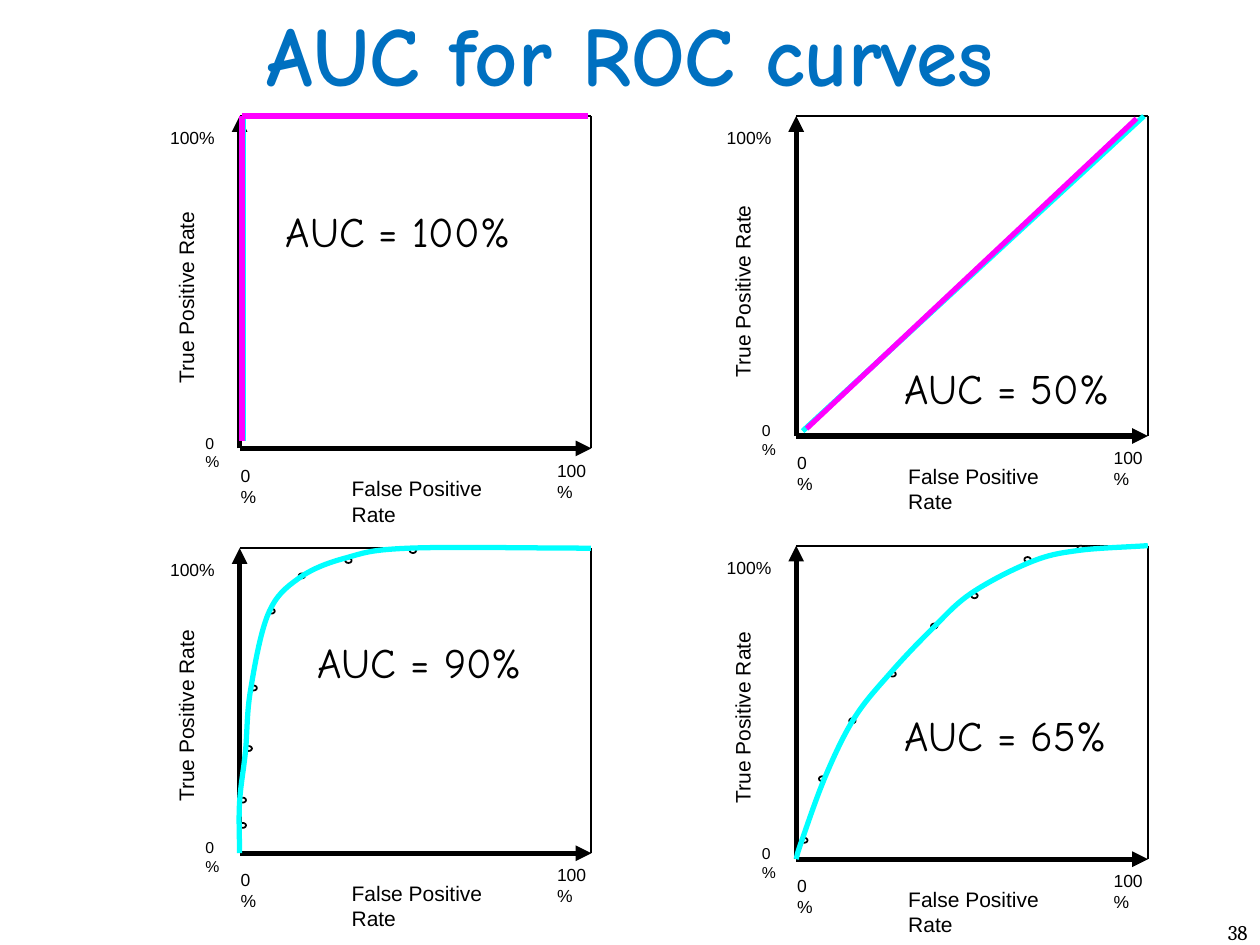
from lxml import etree
from pptx import Presentation
from pptx.dml.color import RGBColor
from pptx.enum.shapes import MSO_CONNECTOR, MSO_SHAPE
from pptx.enum.text import MSO_ANCHOR, PP_ALIGN
from pptx.oxml.ns import qn
from pptx.util import Cm, Pt

LINE = MSO_CONNECTOR.STRAIGHT
OVAL = MSO_SHAPE.OVAL
MID = MSO_ANCHOR.MIDDLE
LEFT, CENTER, RIGHT = PP_ALIGN.LEFT, PP_ALIGN.CENTER, PP_ALIGN.RIGHT
BLACK = RGBColor(0, 0, 0)
WHITE = RGBColor(255, 255, 255)
BLUE = RGBColor(0, 0x70, 0xC0)
CYAN = RGBColor(0, 255, 255)
PINK = RGBColor(255, 0, 255)

WIDE = 7.09
DOT_W, DOT_H = 0.13, 0.1
PLOTS = [
    {"left": 4.83, "top": 2.34, "base": 9.04,
     "auc": ("AUC = 100%", 5.51, 4.01, 5.92),
     "lines": [(CYAN, [(11.84, 2.34), (4.9, 2.34), (4.9, 8.89)]),
               (PINK, [(11.86, 2.34), (4.88, 2.34), (4.88, 8.89)])]},
    {"left": 16.05, "top": 2.34, "base": 8.79,
     "auc": ("AUC = 50%", 17.98, 7.19, 5.28),
     "lines": [(CYAN, [(23.06, 2.34), (16.18, 8.69)]),
               (PINK, [(22.91, 2.39), (16.26, 8.64)])]},
    {"left": 4.83, "top": 11.05, "base": 17.2,
     "auc": ("AUC = 90%", 6.15, 12.7, 5.28),
     "dots": [(8.26, 11.05), (6.96, 11.25), (6.02, 11.56), (5.41, 12.27),
              (5.05, 13.82), (4.95, 15.04), (4.83, 16.08), (4.83, 16.59)],
     "curve": [(11.91, 11.05), (8.26, 11.05), (6.96, 11.25), (6.02, 11.66),
               (5.41, 12.37), (5.05, 13.92), (4.95, 15.14), (4.83, 16.18),
               (4.83, 17.2)]},
    {"left": 16.05, "top": 11, "base": 17.32,
     "auc": ("AUC = 65%", 17.98, 14.17, 5.28),
     "dots": [(21.72, 11), (20.65, 11.23), (19.58, 11.96), (18.77, 12.57),
              (17.93, 13.54), (17.12, 14.48), (16.51, 15.65), (16.15, 16.89)],
     "curve": [(23.14, 11), (21.72, 11.1), (20.78, 11.33), (19.58, 11.96),
               (18.77, 12.7), (17.93, 13.59), (17.22, 14.48), (16.64, 15.65),
               (16.15, 16.99), (16.05, 17.32)]},
]
LABELS = [
    ("100%", "top", -1.65, 0.1, 1.54, 0.69, 10),
    ("0%", "base", -0.94, -0.43, 0.83, 1.02, 9),
    ("0%", "base", -0.23, 0.2, 0.83, 1.09, 10),
    ("100%", "base", 6.15, 0.1, 1.3, 1.09, 10),
    ("False Positive Rate", "base", 2.01, 0.43, 3.78, 1.27, 12),
]

deck = Presentation()
deck.slide_width, deck.slide_height = Cm(25.4), Cm(19.05)
slide = deck.slides.add_slide(deck.slide_layouts[5])
shapes = slide.shapes


def put_text(text, x, y, w, h, size=12, font="Arial", color=BLACK, bold=False,
             align=LEFT, turn=0, box=None):
    box = box or shapes.add_textbox(0, 0, 0, 0)
    box.left, box.top, box.width, box.height = Cm(x), Cm(y), Cm(w), Cm(h)
    box.rotation = turn
    box.text_frame.word_wrap = True
    para = box.text_frame.paragraphs[0]
    para.alignment = align
    run = para.add_run()
    run.text = text
    run.font.size, run.font.name, run.font.bold = Pt(size), font, bold
    run.font.color.rgb = color
    return box


def draw_line(start, end, color=BLACK, width=1, arrow=False):
    line = shapes.add_connector(LINE, *[Cm(v) for v in (*start, *end)])
    line.line.color.rgb = color
    line.line.width = Pt(width)
    props = line._element.spPr
    if arrow:
        etree.SubElement(props.find(qn("a:ln")), qn("a:tailEnd"), type="triangle")
    etree.SubElement(props, qn("a:effectLst"))


def draw_dot(x, y):
    dot = shapes.add_shape(OVAL, Cm(x), Cm(y), Cm(DOT_W), Cm(DOT_H))
    dot.shadow.inherit = False
    dot.fill.solid()
    dot.fill.fore_color.rgb = WHITE
    dot.line.color.rgb = BLACK
    dot.line.width = Pt(1)


def ease(knots, i):
    (ax, ay), (bx, by) = knots[max(i - 1, 0)], knots[min(i + 1, len(knots) - 1)]
    part = 6 if 0 < i < len(knots) - 1 else 3
    return (bx - ax) / part, (by - ay) / part


def draw_curve(knots):
    points = []
    for i in range(len(knots) - 1):
        (ax, ay), (bx, by) = knots[i], knots[i + 1]
        (ux, uy), (vx, vy) = ease(knots, i), ease(knots, i + 1)
        points += [(ax + ux, ay + uy), (bx - vx, by - vy), (bx, by)]
    pen = shapes.build_freeform(Cm(knots[0][0]), Cm(knots[0][1]))
    pen.add_line_segments([(Cm(x), Cm(y)) for x, y in points], close=False)
    curve = pen.convert_to_shape()
    steps = list(curve._element.iter(qn("a:lnTo")))
    for i in range(0, len(steps), 3):
        steps[i].tag = qn("a:cubicBezTo")
        for step in steps[i + 1:i + 3]:
            steps[i].append(step[0])
            step.getparent().remove(step)
    curve.shadow.inherit = False
    curve.fill.background()
    curve.line.color.rgb = CYAN
    curve.line.width = Pt(3)


def draw_plot(plot):
    left, top, base = plot["left"], plot["top"], plot["base"]
    right = left + WIDE
    draw_line((left, top), (right, top))
    draw_line((right, top), (right, base))
    draw_line((left, base), (left, top), width=3, arrow=True)
    draw_line((left, base), (right, base), width=3, arrow=True)
    for text, edge, dx, dy, w, h, size in LABELS:
        put_text(text, left + dx, plot[edge] + dy, w, h, size=size)
    w, h = 4.06, 1.27
    put_text("True Positive Rate", left - 0.83 - w / 2,
             (top + base) / 2 + 0.26 - h / 2, w, h, turn=270)
    for dot in plot.get("dots", []):
        draw_dot(*dot)
    if "curve" in plot:
        draw_curve(plot["curve"])
    for color, points in plot.get("lines", []):
        for start, end in zip(points, points[1:]):
            draw_line(start, end, color, 3)
    text, x, y, w = plot["auc"]
    put_text(text, x, y, w, 1.27, size=24, font="Comic Neue")


for plot in PLOTS:
    draw_plot(plot)
title = put_text("AUC for ROC curves", 0, 0, 25.4, 2.12, size=48, font="Comic Neue",
                 color=BLUE, bold=True, align=CENTER, box=shapes.title)
title.text_frame.vertical_anchor = MID
put_text("38", 23.5, 18.42, 1.9, 0.64, font="Cambria", align=RIGHT)
deck.save("out.pptx")
